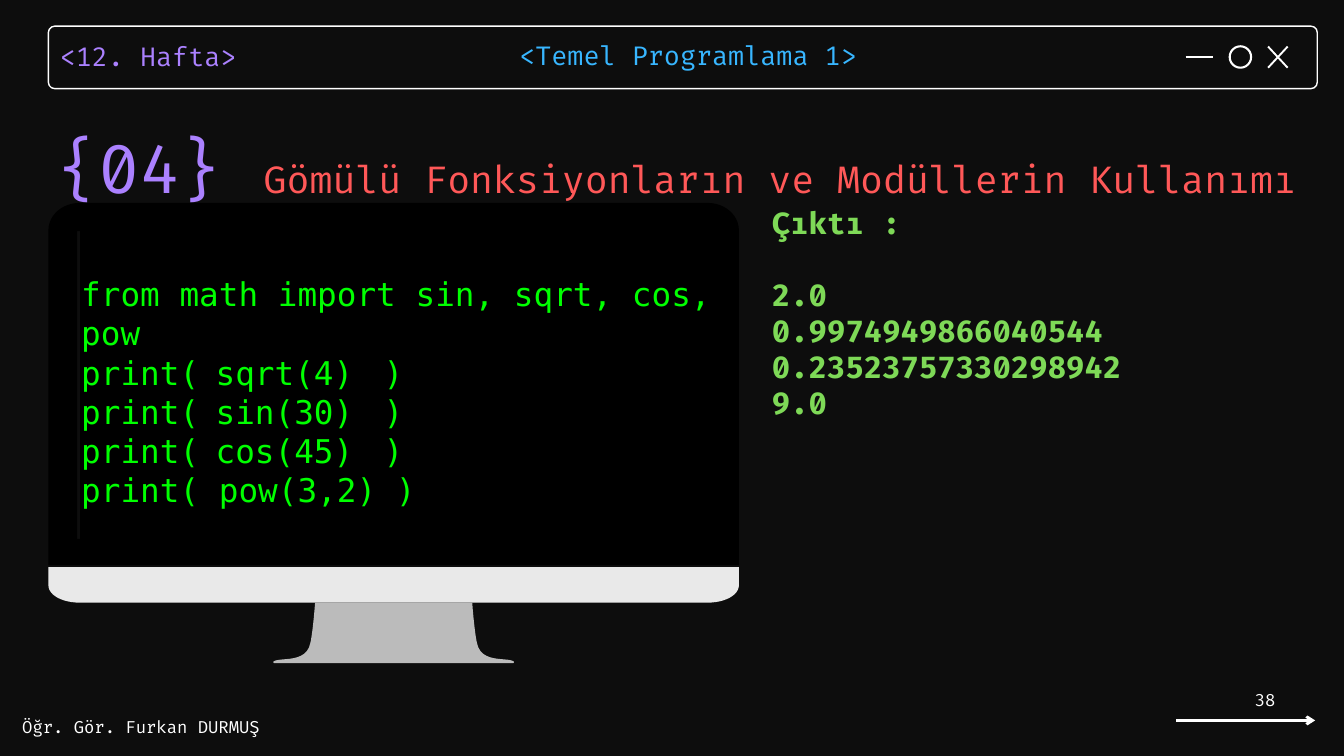
from lxml import etree
from pptx import Presentation
from pptx.dml.color import RGBColor
from pptx.enum.shapes import MSO_CONNECTOR as CONN, MSO_SHAPE as SHAPE
from pptx.enum.text import MSO_ANCHOR as ANCHOR, MSO_AUTO_SIZE as AUTO, PP_ALIGN as ALIGN
from pptx.oxml.ns import qn
from pptx.util import Cm, Pt

FIRA, MONO = "Fira Code", "DejaVu Sans Mono"
WHITE, BLACK, PURPLE = "FFFFFF", "000000", "AB81FF"

# Content: header and footer as (text, box in cm, size, colour, line spacing)
LABELS = [
    ("<12. Hafta>", (2.26, 1.32, 8.64, 1.35), 28, PURPLE, 39.2),
    ("<Temel Programlama 1>", (19.63, 1.3, 13.44, 1.35), 28, "38B6FF", 39.2),
    ("Öğr. Gör. Furkan DURMUŞ", (0.84, 27.1, 9.32, 0.76), 18, WHITE, None),
]
TITLE = [("{04} ", 72, PURPLE),
         ("Gömülü Fonksiyonların ve Modüllerin Kullanımı", 40, "FF5858")]
CODE = ["from math import sin, sqrt, cos, pow",
        "print(\tsqrt(4)\t)",
        "print(\tsin(30)\t)",
        "print(\tcos(45)\t)",
        "print( pow(3,2) )"]
OUTPUT = ["Çıktı :", "2.0", "0.9974949866040544", "0.23523757330298942", "9.0"]
PAGE = "38"

# Left halves of the monitor parts: 2 numbers are a corner, 6 a Bézier curve
CENTRE = 14.88
FRAME = [(1.83, 21.36), (1.83, 8.71), (1.83, 8.13, 2.36, 7.67, 3.02, 7.67)]
BEZEL = [(2.92, 20.37), (2.92, 8.74)]
CHIN = [(1.83, 21.44), (1.83, 22.12), (1.83, 22.5, 2.36, 22.78, 3.02, 22.78)]
STAND = [(11.91, 22.78), (11.91, 22.78, 11.83, 23.88, 11.73, 24.31),
         (11.58, 25.07, 10.64, 24.84, 10.36, 24.99),
         (10.31, 25.02, 10.34, 25.07, 10.39, 25.07)]


def rgb(value):
    return RGBColor.from_string(value)


def cm(values):
    return [Cm(v) for v in values]


def paint(sp, fill=None, line=None, width=1):
    sp.shadow.inherit = False
    if fill:
        sp.fill.solid()
        sp.fill.fore_color.rgb = rgb(fill)
    else:
        sp.fill.background()
    if line:
        sp.line.color.rgb = rgb(line)
        sp.line.width = Pt(width)
    else:
        sp.line.fill.background()


def add_line(s, ends, width, arrow=False):
    c = s.shapes.add_connector(CONN.STRAIGHT, *cm(ends))
    c.line.color.rgb = rgb(WHITE)
    c.line.width = Pt(width)
    if arrow:
        etree.SubElement(c.line._get_or_add_ln(), qn("a:tailEnd"), type="arrow")
    etree.SubElement(c._element.spPr, qn("a:effectLst"))


def add_text(s, lines, box, size, color, font=FIRA, spacing=None,
             align=ALIGN.LEFT, bold=False):
    sp = s.shapes.add_textbox(*cm(box))
    tf = sp.text_frame
    tf.word_wrap = True
    tf.margin_left = tf.margin_right = tf.margin_top = tf.margin_bottom = 0
    for i, line in enumerate(lines):
        p = tf.paragraphs[0] if i == 0 else tf.add_paragraph()
        p.text = line
        p.alignment = align
        if spacing:
            p.line_spacing = Pt(spacing)
        p.font.name, p.font.size, p.font.bold = font, Pt(size), bold
        p.font.color.rgb = rgb(color)
    return tf


def symmetric(half, steps=12):
    """Flatten the curves of a left half and add its mirror image."""
    pts = []
    for item in half:
        if len(item) == 2:
            pts.append(item)
            continue
        ctrl = [pts[-1], item[:2], item[2:4], item[4:]]
        for n in range(1, steps + 1):
            t = n / steps
            w = ((1 - t) ** 3, 3 * t * (1 - t) ** 2, 3 * t * t * (1 - t), t ** 3)
            pts.append(tuple(sum(k * q[a] for k, q in zip(w, ctrl)) for a in (0, 1)))
    return pts + [(2 * CENTRE - x, y) for x, y in reversed(pts)]


def add_outline(s, halves, fill):
    contours = [[cm(pt) for pt in symmetric(half)] for half in halves]
    fb = s.shapes.build_freeform(*contours[0][0])
    for i, pts in enumerate(contours):
        if i:
            fb.move_to(*pts[0])
        fb.add_line_segments(pts[1:], close=True)
    paint(fb.convert_to_shape(), fill)


prs = Presentation()
prs.slide_width, prs.slide_height = Cm(50.8), Cm(28.575)
s = prs.slides.add_slide(prs.slide_layouts[5])
s.background.fill.solid()
s.background.fill.fore_color.rgb = rgb("0D0D0D")

# Window bar with its three buttons
bar = s.shapes.add_shape(SHAPE.ROUNDED_RECTANGLE, *cm((1.83, 0.99, 47.96, 2.36)))
bar.adjustments[0] = 0.1
paint(bar, line=WHITE, width=1.5)
add_line(s, (44.81, 2.16, 45.85, 2.16), 2)
ring = s.shapes.add_shape(SHAPE.OVAL, *cm((46.48, 1.75, 0.81, 0.81)))
paint(ring, line=WHITE, width=2.25)
add_line(s, (47.93, 1.76, 48.67, 2.56), 2)
add_line(s, (48.67, 1.76, 47.93, 2.56), 2)

# Header and footer texts
for text, box, size, color, spacing in LABELS:
    add_text(s, [text], box, size, color, spacing=spacing)
add_line(s, (44.45, 27.23, 49.71, 27.23), 3, arrow=True)
tf = add_text(s, [PAGE], (42.55, 25.93, 5.66, 1.02), 18, WHITE, align=ALIGN.RIGHT)
tf.vertical_anchor = ANCHOR.MIDDLE

# Monitor with the code
add_outline(s, [FRAME, BEZEL], BLACK)
add_outline(s, [CHIN], "E9E9E9")
add_outline(s, [STAND], "BBBBBB")
screen = s.shapes.add_shape(SHAPE.RECTANGLE, *cm((3.07, 8.38, 24, 12.62)))
paint(screen, BLACK, BLACK, 2)
add_text(s, CODE, (3.07, 10.36, 24.66, 7.49), 35, "00FF00", font=MONO)

# Program output, its heading set apart by one line
tf = add_text(s, OUTPUT, (29.18, 7.75, 14.4, 8.2), 32, "7ED957",
              align=ALIGN.JUSTIFY, bold=True)
tf.paragraphs[1].space_before = Pt(38.5)

# Title
title = s.shapes.title
title.left, title.top, title.width, title.height = cm((1.9, 4.09, 48.9, 3.51))
tf = title.text_frame
tf.auto_size, tf.word_wrap, tf.vertical_anchor = AUTO.NONE, True, ANCHOR.TOP
p = tf.paragraphs[0]
p.alignment, p.line_spacing, p.space_before = ALIGN.LEFT, Pt(102.6), Pt(0)
for text, size, color in TITLE:
    r = p.add_run()
    r.text = text
    r.font.name, r.font.size = FIRA, Pt(size)
    r.font.color.rgb = rgb(color)

prs.save("out.pptx")
